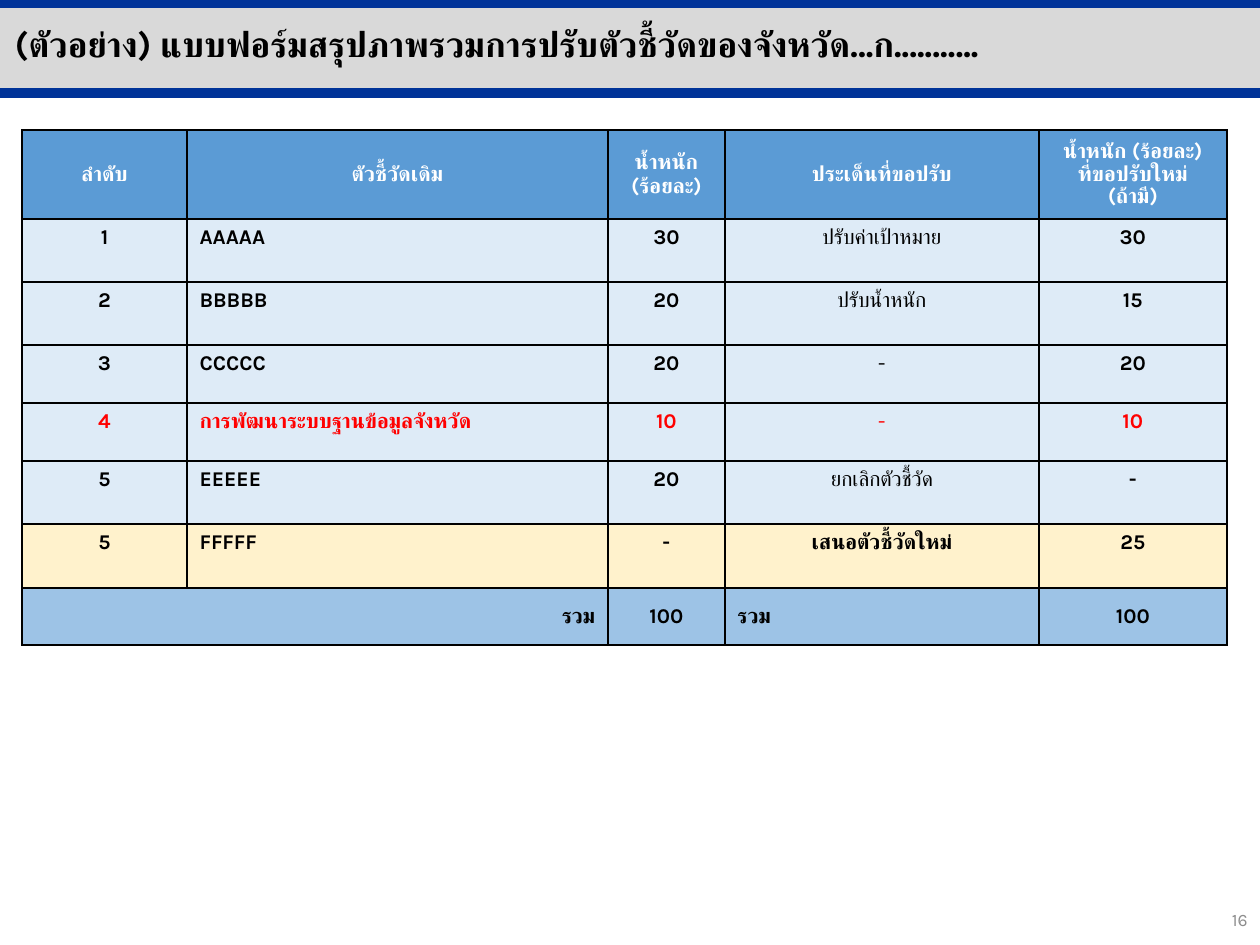
from dataclasses import dataclass

from lxml.etree import SubElement
from pptx import Presentation
from pptx.dml.color import RGBColor
from pptx.enum.shapes import MSO_CONNECTOR as Connector, MSO_SHAPE as Shape
from pptx.enum.text import MSO_ANCHOR as Anchor, MSO_AUTO_SIZE as AutoSize, PP_ALIGN as Align
from pptx.oxml import parse_xml
from pptx.oxml.ns import nsdecls, qn
from pptx.util import Emu, Pt

# Content
TITLE = "(ตัวอย่าง) แบบฟอร์มสรุปภาพรวมการปรับตัวชี้วัดของจังหวัด…ก.………."
PAGE_NUMBER = "16"
HEADINGS = ("ลำดับ", "ตัวชี้วัดเดิม", "น้ำหนัก\n(ร้อยละ)", "ประเด็นที่ขอปรับ",
            "น้ำหนัก (ร้อยละ)\nที่ขอปรับใหม่\n(ถ้ามี)")
INDICATORS = [
    ("1", "AAAAA", "30", "ปรับค่าเป้าหมาย", "30"),
    ("2", "BBBBB", "20", "ปรับน้ำหนัก", "15"),
    ("3", "CCCCC", "20", "-", "20"),
    ("4", "การพัฒนาระบบฐานข้อมูลจังหวัด", "10", "-", "10"),
    ("5", "EEEEE", "20", "ยกเลิกตัวชี้วัด", "-"),
]
NEW_INDICATOR = ("5", "FFFFF", "-", "เสนอตัวชี้วัดใหม่", "25")
TOTALS = ("รวม", "", "100", "รวม", "100")
HIGHLIGHTED = "4"

# Layout in px
PX = 914400 // 126
SLIDE = (1260, 945)
BAND = (0, 7, 1260, 85)
RULES_Y = (3, 93)
TITLE_BOX = (2, 16, 1173, 55)
NUMBER_BOX = (976, 895, 284, 50)
TABLE_AT = (22, 130)
COLUMNS = (165, 421, 117, 314, 188)
ROWS = (89, 63, 63, 58, 58, 63, 64, 57)
NAME, ISSUE = 1, 3


@dataclass(frozen=True)
class Theme:
    font: str = "Karla"
    title_size: int = 20
    table_size: int = 12
    number_size: int = 10
    ink: str = "000000"
    white: str = "FFFFFF"
    alert: str = "FF0000"
    muted: str = "8C8C8C"
    band: str = "D9D9D9"
    rule: str = "003399"
    header: str = "5B9BD5"
    body: str = "DEEBF7"
    new: str = "FFF2CC"
    total: str = "9DC3E6"


THEME = Theme()


def px(*lengths):
    return [Emu(length * PX) for length in lengths]


def rgb(value):
    return RGBColor.from_string(value)


def write(frame, text, size=THEME.table_size, color=THEME.ink, bold=True,
          align=Align.CENTER, anchor=Anchor.TOP, spacing=None):
    frame.word_wrap = True
    frame.vertical_anchor = anchor
    frame.text = text
    for paragraph in frame.paragraphs:
        paragraph.alignment = align
        if spacing:
            paragraph.line_spacing = spacing
        for run in paragraph.runs:
            font = run.font
            font.name, font.size, font.bold = THEME.font, Pt(size), bold
            font.color.rgb = rgb(color)
            # Thai text takes the complex-script typeface
            SubElement(font._element, qn("a:cs"), typeface=THEME.font)


def add_rule(slide, y):
    rule = slide.shapes.add_connector(Connector.STRAIGHT, *px(0, y, SLIDE[0], y))
    rule.line.color.rgb = rgb(THEME.rule)
    rule.line.width = Pt(6)
    SubElement(rule._element.spPr, qn("a:effectLst"))


def paint(cell, fill):
    properties = cell._tc.get_or_add_tcPr()
    for side in ("lnL", "lnR", "lnT", "lnB"):
        properties.append(parse_xml(
            f'<a:{side} {nsdecls("a")} w="{Pt(1)}"><a:solidFill>'
            f'<a:srgbClr val="{THEME.ink}"/></a:solidFill></a:{side}>'))
    cell.fill.solid()
    cell.fill.fore_color.rgb = rgb(fill)


def add_table(slide):
    rows = [(HEADINGS, THEME.header)]
    rows += [(indicator, THEME.body) for indicator in INDICATORS]
    rows += [(NEW_INDICATOR, THEME.new), (TOTALS, THEME.total)]
    table = slide.shapes.add_table(
        len(rows), len(COLUMNS), *px(*TABLE_AT, sum(COLUMNS), sum(ROWS))).table
    table.first_row = table.horz_banding = False
    for column, width in zip(table.columns, px(*COLUMNS)):
        column.width = width
    for row, height in zip(table.rows, px(*ROWS)):
        row.height = height

    for r, (texts, fill) in enumerate(rows):
        heading, total = texts is HEADINGS, texts is TOTALS
        color = (THEME.white if heading else
                 THEME.alert if texts[0] == HIGHLIGHTED else THEME.ink)
        for c, text in enumerate(texts):
            cell = table.cell(r, c)
            paint(cell, fill)
            align = Align.CENTER
            if total and c == 0:
                align = Align.RIGHT
            elif total and c == ISSUE or not heading and c == NAME:
                align = Align.LEFT
            write(cell.text_frame, text, color=color, align=align,
                  bold=not (c == ISSUE and fill == THEME.body),
                  spacing=0.9 if text.count("\n") > 1 else None)
            cell.vertical_anchor = Anchor.MIDDLE if heading or total else Anchor.TOP
    last = len(rows) - 1
    table.cell(last, 0).merge(table.cell(last, NAME))


def main():
    deck = Presentation()
    deck.slide_width, deck.slide_height = px(*SLIDE)
    slide = deck.slides.add_slide(deck.slide_layouts[5])

    # Title band between two rules
    band = slide.shapes.add_shape(Shape.RECTANGLE, *px(*BAND))
    band.shadow.inherit = False
    band.fill.solid()
    band.fill.fore_color.rgb = rgb(THEME.band)
    band.line.fill.background()
    for y in RULES_Y:
        add_rule(slide, y)

    # Title, brought in front of the band
    title = slide.shapes.title
    title.left, title.top, title.width, title.height = px(*TITLE_BOX)
    write(title.text_frame, TITLE, size=THEME.title_size, align=Align.LEFT)
    title.text_frame.auto_size = AutoSize.NONE
    slide.shapes._spTree.append(title._element)

    # Indicator table
    add_table(slide)

    # Page number
    number = slide.shapes.add_textbox(*px(*NUMBER_BOX))
    write(number.text_frame, PAGE_NUMBER, size=THEME.number_size, color=THEME.muted,
          bold=False, align=Align.RIGHT, anchor=Anchor.MIDDLE)

    deck.save("out.pptx")


if __name__ == "__main__":
    main()
